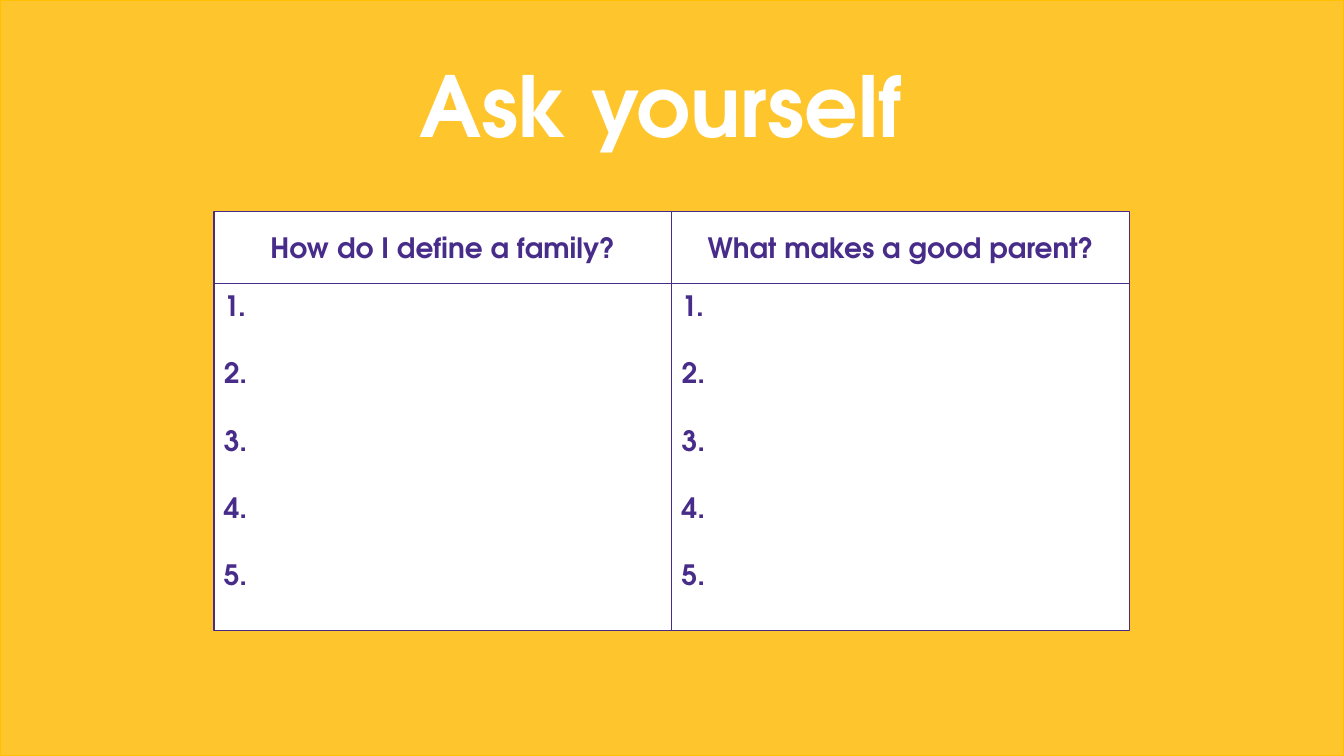
from dataclasses import dataclass

import pptx
import pptx.dml.color
import pptx.enum.shapes
import pptx.enum.text
import pptx.util

Cm = pptx.util.Cm
Pt = pptx.util.Pt
RGBColor = pptx.dml.color.RGBColor
Align = pptx.enum.text.PP_ALIGN
Anchor = pptx.enum.text.MSO_ANCHOR

YELLOW = RGBColor(0xFE, 0xC5, 0x2C)
AMBER = RGBColor(0xFF, 0xC0, 0x00)
PURPLE = RGBColor(0x48, 0x2C, 0x89)
WHITE = RGBColor(0xFF, 0xFF, 0xFF)
FONT = "TeX Gyre Adventor"

SLIDE_WIDTH, SLIDE_HEIGHT = Cm(33.87), Cm(19.05)
GRID_LEFT, GRID_TOP = Cm(5.39), Cm(5.33)
COLUMN_WIDTH = Cm(11.54)
HEADER_HEIGHT, ANSWER_HEIGHT = Cm(1.82), Cm(8.74)
ANSWER_COUNT = 5


@dataclass
class TextStyle:
    size: int
    color: RGBColor
    align: Align
    anchor: Anchor
    gap: int = 0


@dataclass
class Panel:
    left: int
    top: int
    width: int
    height: int
    fill: RGBColor
    line: RGBColor


TITLE = TextStyle(60, WHITE, Align.CENTER, Anchor.TOP)
HEADER = TextStyle(20, PURPLE, Align.CENTER, Anchor.MIDDLE)
ANSWER = TextStyle(20, PURPLE, Align.LEFT, Anchor.TOP, gap=24)

QUESTIONS = ["How do I define a family?", "What makes a good parent?"]


def write_lines(frame: pptx.text.text.TextFrame, lines: list[str], style: TextStyle) -> None:
    frame_format = {
        "word_wrap": True,
        "auto_size": pptx.enum.text.MSO_AUTO_SIZE.NONE,
        "vertical_anchor": style.anchor,
    }
    for name, value in frame_format.items():
        setattr(frame, name, value)
    font_format = {"name": FONT, "size": Pt(style.size), "bold": True}
    for index, line in enumerate(lines):
        para = frame.add_paragraph() if index else frame.paragraphs[0]
        para.alignment = style.align
        para.space_before = Pt(style.gap if index else 0)
        span = para.add_run()
        span.text = line
        for name, value in font_format.items():
            setattr(span.font, name, value)
        span.font.color.rgb = style.color


def add_panel(page: pptx.slide.Slide, panel: Panel) -> pptx.shapes.autoshape.Shape:
    box = page.shapes.add_shape(
        pptx.enum.shapes.MSO_SHAPE.RECTANGLE, panel.left, panel.top, panel.width, panel.height
    )
    box.shadow.inherit = False
    box.fill.solid()
    box.fill.fore_color.rgb = panel.fill
    box.line.color.rgb = panel.line
    box.line.width = Pt(1)
    return box


def add_background(page: pptx.slide.Slide) -> None:
    box = add_panel(page, Panel(0, 0, SLIDE_WIDTH, SLIDE_HEIGHT, YELLOW, AMBER))
    # Send the panel behind the title placeholder
    page.shapes.title.element.addprevious(box.element)


def add_title(page: pptx.slide.Slide) -> None:
    title = page.shapes.title
    place = {"left": Cm(-0.28), "top": Cm(1.22), "width": SLIDE_WIDTH, "height": Cm(2.82)}
    for name, value in place.items():
        setattr(title, name, value)
    write_lines(title.text_frame, ["Ask yourself"], TITLE)


def add_question_grid(page: pptx.slide.Slide) -> None:
    numbers = [f"{number}." for number in range(1, ANSWER_COUNT + 1)]
    for column, question in enumerate(QUESTIONS):
        left = GRID_LEFT + column * COLUMN_WIDTH
        top = GRID_TOP
        # Header cell, then the answer cell directly below it
        for height, lines, style in (
            (HEADER_HEIGHT, [question], HEADER),
            (ANSWER_HEIGHT, numbers, ANSWER),
        ):
            box = add_panel(page, Panel(left, top, COLUMN_WIDTH, height, WHITE, PURPLE))
            write_lines(box.text_frame, lines, style)
            top += height


def main() -> None:
    deck = pptx.Presentation()
    deck.slide_width, deck.slide_height = SLIDE_WIDTH, SLIDE_HEIGHT
    page = deck.slides.add_slide(deck.slide_layouts[5])
    add_background(page)
    add_title(page)
    add_question_grid(page)
    deck.save("out.pptx")


if __name__ == "__main__":
    main()
